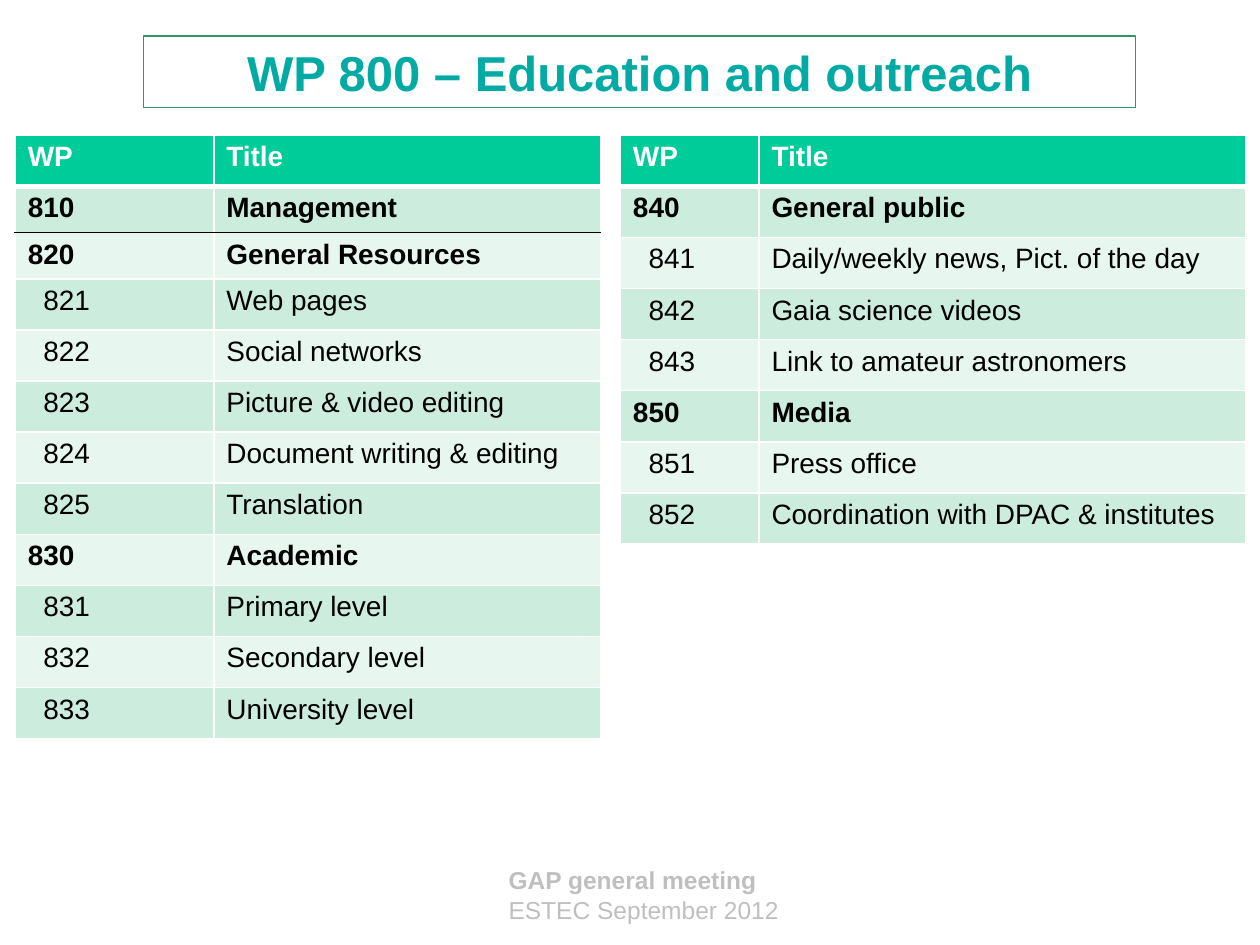
from lxml import etree
from pptx import Presentation
from pptx.dml.color import RGBColor
from pptx.enum.text import MSO_ANCHOR, MSO_AUTO_SIZE, PP_ALIGN
from pptx.oxml.ns import qn
from pptx.util import Pt

CENTER = PP_ALIGN.CENTER
MIDDLE = MSO_ANCHOR.MIDDLE
NO_AUTOFIT = MSO_AUTO_SIZE.NONE
TITLE_ONLY = 5

FONT = "Arial"
COLORS = {
    "title": "01ABA3",
    "frame": "32946A",
    "header": "00CC99",
    "band_dark": "CCECDE",
    "band_light": "E7F6EF",
    "white": "FFFFFF",
    "black": "000000",
    "footer": "BFBFBF",
}
ROW_HEIGHT = 29.2
TIGHT_HEIGHT = 26.3
MARGIN = 7.2
SUB_INDENT = 8.9

LEFT_PACKAGES = [
    ("810", "Management"),
    ("820", "General Resources"),
    ("821", "Web pages"),
    ("822", "Social networks"),
    ("823", "Picture & video editing"),
    ("824", "Document writing & editing"),
    ("825", "Translation"),
    ("830", "Academic"),
    ("831", "Primary level"),
    ("832", "Secondary level"),
    ("833", "University level"),
]
RIGHT_PACKAGES = [
    ("840", "General public"),
    ("841", "Daily/weekly news, Pict. of the day"),
    ("842", "Gaia science videos"),
    ("843", "Link to amateur astronomers"),
    ("850", "Media"),
    ("851", "Press office"),
    ("852", "Coordination with DPAC & institutes"),
]


def rgb(name):
    return RGBColor.from_string(COLORS[name])


def format_runs(p, size, color, bold):
    for r in p.runs:
        r.font.name = FONT
        r.font.size = Pt(size)
        r.font.bold = bold
        r.font.color.rgb = rgb(color)


def set_borders(cell, top, bottom):
    """Draw the four cell borders; top and bottom are (colour, width) pairs."""
    side = ("white", 1)
    tc_pr = cell._tc.get_or_add_tcPr()
    for tag, (color, width) in zip(("lnL", "lnR", "lnT", "lnB"),
                                   (side, side, top, bottom)):
        ln = etree.SubElement(tc_pr, qn(f"a:{tag}"), w=str(Pt(width)))
        fill = etree.SubElement(ln, qn("a:solidFill"))
        etree.SubElement(fill, qn("a:srgbClr"), val=COLORS[color])


def add_title(slide, left, top, width, height):
    sp = slide.shapes.title
    sp.left, sp.top, sp.width, sp.height = map(Pt, (left, top, width, height))
    sp.line.color.rgb = rgb("frame")
    sp.line.width = Pt(0.75)
    tf = sp.text_frame
    tf.auto_size = NO_AUTOFIT
    tf.word_wrap = True
    tf.vertical_anchor = MIDDLE
    tf.text = "WP 800 – Education and outreach"
    p = tf.paragraphs[0]
    p.alignment = CENTER
    format_runs(p, 28, "title", True)


def add_packages(slide, left, top, col_widths, packages, ruled_row=None, tight_rows=()):
    """Add a work package table, with a black rule below ruled_row."""
    rows = [("WP", "Title")] + packages
    heights = [TIGHT_HEIGHT if i in tight_rows else ROW_HEIGHT for i in range(len(rows))]
    table = slide.shapes.add_table(len(rows), 2, Pt(left), Pt(top),
                                   Pt(sum(col_widths)), Pt(sum(heights))).table
    for column, width in zip(table.columns, col_widths):
        column.width = Pt(width)

    rules = [("white", 1)] * (len(rows) + 1)
    rules[1] = ("white", 3)
    if ruled_row is not None:
        rules[ruled_row + 1] = ("black", 1)

    for i, (values, height) in enumerate(zip(rows, heights)):
        table.rows[i].height = Pt(height)
        is_header = i == 0
        is_group = not is_header and values[0].endswith("0")
        band = "header" if is_header else ("band_light", "band_dark")[i % 2]
        for j, value in enumerate(values):
            cell = table.cell(i, j)
            set_borders(cell, rules[i], rules[i + 1])
            cell.fill.solid()
            cell.fill.fore_color.rgb = rgb(band)
            if j == 0 and not (is_header or is_group):
                cell.margin_left = Pt(MARGIN + SUB_INDENT)
            cell.text_frame.text = value
            format_runs(cell.text_frame.paragraphs[0], 16,
                        "white" if is_header else "black", is_header or is_group)


def add_footer(slide, left, top, width, height):
    sp = slide.shapes.add_textbox(*map(Pt, (left, top, width, height)))
    tf = sp.text_frame
    tf.word_wrap = True
    tf.text = "GAP general meeting\nESTEC September 2012"
    for p, bold in zip(tf.paragraphs, (True, False)):
        format_runs(p, 14, "footer", bold)


def main():
    prs = Presentation()
    prs.slide_width, prs.slide_height = Pt(720), Pt(540)
    slide = prs.slides.add_slide(prs.slide_layouts[TITLE_ONLY])
    add_footer(slide, 283.5, 491, 275, 41)
    add_title(slide, 82, 20.6, 567, 41)
    add_packages(slide, 8.7, 77.3, (113.5, 221), LEFT_PACKAGES,
                 ruled_row=1, tight_rows=(1, 2))
    add_packages(slide, 354.5, 77.3, (79.2, 278), RIGHT_PACKAGES)
    prs.save("out.pptx")


if __name__ == "__main__":
    main()
